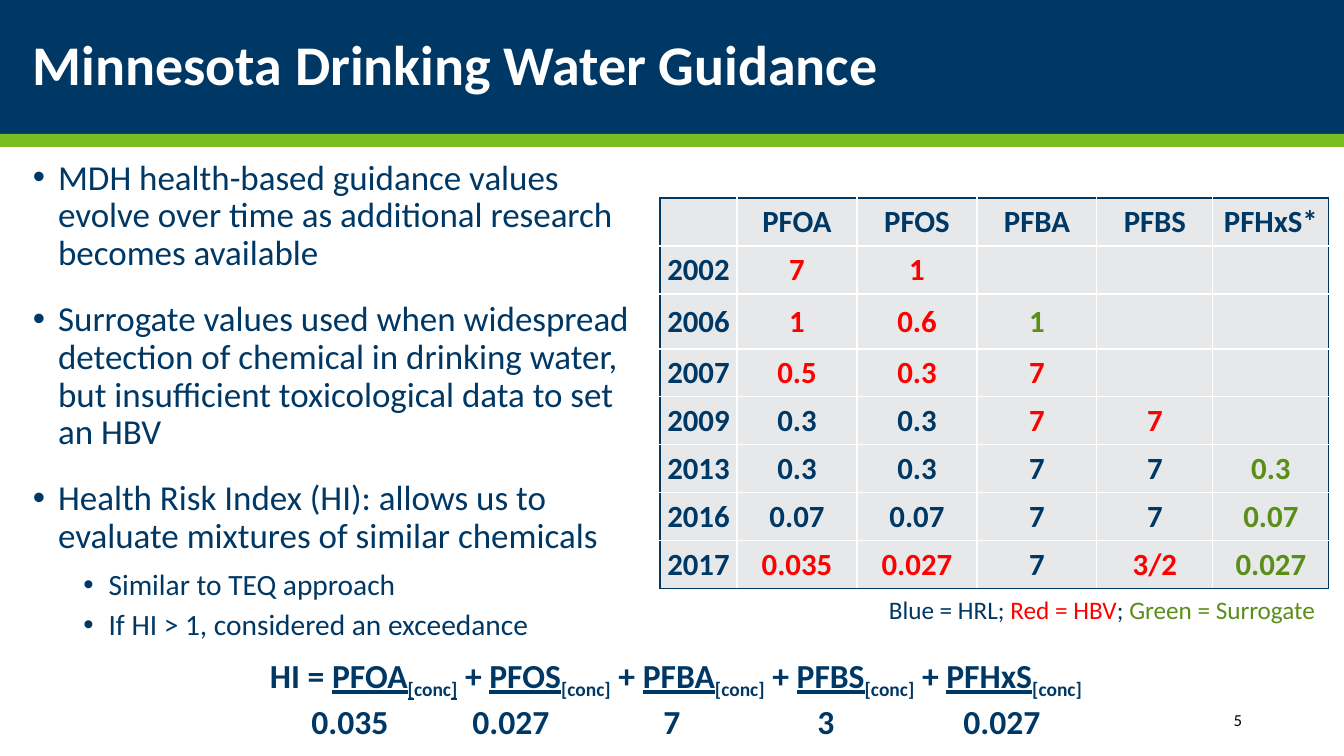
from lxml import etree
from pptx import Presentation
from pptx import util as u
from pptx.dml.color import RGBColor
from pptx.enum import shapes, text
from pptx.oxml import ns

PX = 12700 * 72 / 100.8
NAVY = RGBColor(0x00, 0x38, 0x65)
LIME = RGBColor(0x78, 0xBE, 0x21)
GREEN = RGBColor(0x5A, 0x8E, 0x19)
RED = RGBColor(0xFF, 0x00, 0x00)
GREY = RGBColor(0xE7, 0xE8, 0xEA)
WHITE = RGBColor(0xFF, 0xFF, 0xFF)
BLACK = RGBColor(0x00, 0x00, 0x00)
MID = text.MSO_ANCHOR.MIDDLE
ALIGN = text.PP_ALIGN


def px(*vals):
    return [round(v * PX) for v in vals]


def style(run, size, color, bold=False):
    font = run.font
    font.name, font.size, font.bold = "Calibri", u.Pt(size), bold
    font.color.rgb = color


deck = Presentation()
deck.slide_width, deck.slide_height = px(1344, 756)
slide = deck.slides.add_slide(deck.slide_layouts[6])
items = slide.shapes

# Header bands
for top, high, color in [(0, 134, NAVY), (134, 13, LIME)]:
    band = items.add_shape(shapes.MSO_SHAPE.RECTANGLE, *px(0, top, 1344, high))
    band.shadow.inherit = False
    band.fill.solid()
    band.fill.fore_color.rgb = color
    band.line.fill.background()

# Title and page number
for box, words, size, color, bold, align in [
    ((23, 17, 1228, 101), "Minnesota Drinking Water Guidance", 40, WHITE, True, ALIGN.LEFT),
    ((1091, 701, 161, 40), "5", 12, BLACK, False, ALIGN.RIGHT),
]:
    frame = items.add_textbox(*px(*box)).text_frame
    frame.word_wrap = True
    frame.vertical_anchor = MID
    frame.text = words
    line = frame.paragraphs[0]
    line.alignment = align
    line.line_spacing = 0.9
    style(line.runs[0], size, color, bold)

# Bullet list
points = [
    (0, "MDH health-based guidance values evolve over time as additional research becomes available"),
    (0, "Surrogate values used when widespread detection of chemical in drinking water, "
        "but insufficient toxicological data to set an HBV"),
    (0, "Health Risk Index (HI): allows us to evaluate mixtures of similar chemicals"),
    (1, "Similar to TEQ approach"),
    (1, "If HI > 1, considered an exceedance"),
]
frame = items.add_textbox(*px(23, 155, 633, 536)).text_frame
frame.word_wrap = True
for i, (level, words) in enumerate(points):
    line = frame.add_paragraph() if i else frame.paragraphs[0]
    line.text = words
    line.level = level
    line.line_spacing = 0.9
    line.space_before = u.Pt(0 if level else 10)
    line.space_after = u.Pt(6 if level else 10)
    style(line.runs[0], 21 if level else 25, NAVY)
    props = line._p.get_or_add_pPr()
    props.set("marL", str(u.Inches(0.75 if level else 0.25)))
    props.set("indent", str(u.Inches(-0.25)))
    tint = etree.SubElement(props, ns.qn("a:buClr"))
    etree.SubElement(tint, ns.qn("a:srgbClr"), val=str(NAVY))
    etree.SubElement(props, ns.qn("a:buFont"), typeface="Arial")
    etree.SubElement(props, ns.qn("a:buChar"), char="•")

# Guidance values: r = HBV, g = surrogate, plain = HRL
rows = [
    ["", "PFOA", "PFOS", "PFBA", "PFBS", "PFHxS*"],
    ["2002", "r7", "r1", "", "", ""],
    ["2006", "r1", "r0.6", "g1", "", ""],
    ["2007", "r0.5", "r0.3", "r7", "", ""],
    ["2009", "0.3", "0.3", "r7", "r7", ""],
    ["2013", "0.3", "0.3", "7", "7", "g0.3"],
    ["2016", "0.07", "0.07", "7", "7", "g0.07"],
    ["2017", "r0.035", "r0.027", "7", "r3/2", "g0.027"],
]
wide = [77, 120, 120, 120, 116, 116]
high = [48, 48, 55, 48, 48, 48, 48, 48]
table = items.add_table(len(rows), len(wide), *px(660, 198, sum(wide), sum(high))).table
for col, width in zip(table.columns, px(*wide)):
    col.width = width
for row, height in zip(table.rows, px(*high)):
    row.height = height
for r, row in enumerate(rows):
    for c, value in enumerate(row):
        cell = table.cell(r, c)
        cell.vertical_anchor = MID
        cell.margin_left = cell.margin_right = cell.margin_top = px(1)[0]
        cell.margin_bottom = 0
        outer = {"lnL": c == 0, "lnR": c == len(wide) - 1,
                 "lnT": r == 0, "lnB": r == len(rows) - 1}
        for side, edge in outer.items():
            rule = etree.SubElement(cell._tc.get_or_add_tcPr(), ns.qn("a:" + side), w="12700")
            fill = etree.SubElement(rule, ns.qn("a:solidFill"))
            etree.SubElement(fill, ns.qn("a:srgbClr"), val=str(NAVY if edge else WHITE))
        cell.fill.solid()
        cell.fill.fore_color.rgb = GREY
        if value:
            color = {"r": RED, "g": GREEN}.get(value[0], NAVY)
            cell.text_frame.text = value.lstrip("rg")
            line = cell.text_frame.paragraphs[0]
            line.alignment = ALIGN.CENTER
            style(line.runs[0], 22, color, True)

# Hazard index formula
frame = items.add_textbox(*px(23, 650, 1306, 92)).text_frame
frame.word_wrap = True
upper = frame.paragraphs[0]
upper.alignment = ALIGN.CENTER
parts = [("HI = ", False, False)]
for i, name in enumerate(["PFOA", "PFOS", "PFBA", "PFBS", "PFHxS"]):
    if i:
        parts.append((" + ", False, False))
    parts.append((name, True, False))
    if i:
        parts.append(("[conc]", False, True))
    else:
        parts += [("[", True, True), ("conc", False, True), ("]", True, True)]
for words, under, sub in parts:
    run = upper.add_run()
    run.text = words
    style(run, 24, NAVY, True)
    run.font.underline = under
    if sub:
        run.font._element.set("baseline", "-25000")

# Denominators, each centred on a tab stop
lower = frame.add_paragraph()
lower.text = "\t0.035\t0.027\t7\t3\t0.027"
lower.alignment = ALIGN.LEFT
style(lower.runs[0], 24, NAVY, True)
stops = etree.SubElement(lower._p.get_or_add_pPr(), ns.qn("a:tabLst"))
for stop in px(317, 478, 639, 793, 969):
    etree.SubElement(stops, ns.qn("a:tab"), pos=str(stop), algn="ctr")

# Colour key
frame = items.add_textbox(*px(879, 589, 451, 40)).text_frame
frame.word_wrap = False
for words, color in [("Blue = HRL; ", NAVY), ("Red = HBV", RED),
                     ("; ", NAVY), ("Green = Surrogate", GREEN)]:
    run = frame.paragraphs[0].add_run()
    run.text = words
    style(run, 18, color)

deck.save("out.pptx")
